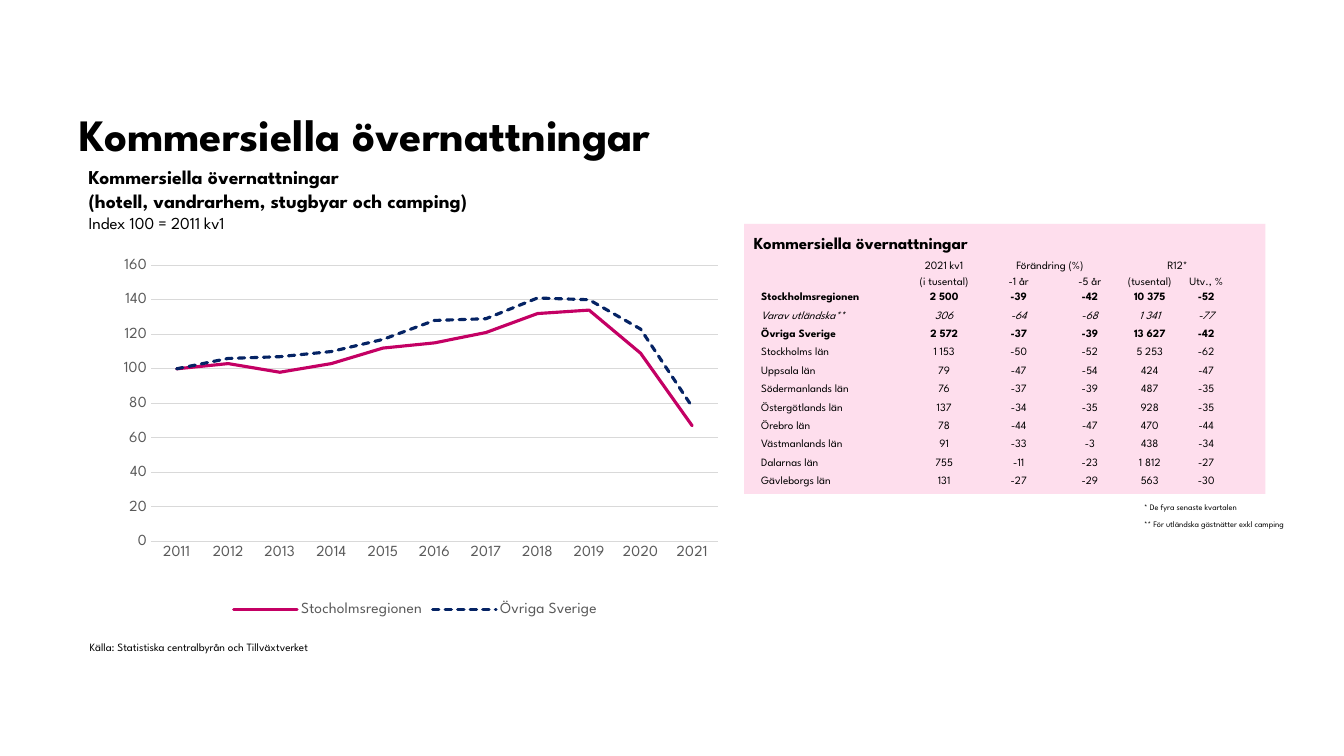
"""Build the slide on commercial overnight stays: index chart and regional table."""
from lxml import etree
from pptx import Presentation
from pptx.chart.data import CategoryChartData
from pptx.dml.color import RGBColor
from pptx.enum.chart import XL_CHART_TYPE, XL_LEGEND_POSITION, XL_TICK_MARK
from pptx.enum.dml import MSO_LINE
from pptx.enum.shapes import MSO_SHAPE
from pptx.enum.text import MSO_ANCHOR, MSO_AUTO_SIZE, PP_ALIGN
from pptx.oxml import parse_xml
from pptx.oxml.ns import nsdecls, qn
from pptx.util import Inches, Pt

FONT = "League Spartan"
BLACK = RGBColor(0x00, 0x00, 0x00)
GREY = RGBColor(0x59, 0x59, 0x59)
GRID = RGBColor(0xD9, 0xD9, 0xD9)
PINK = RGBColor(0xFE, 0xDE, 0xED)
MAGENTA = RGBColor(0xC4, 0x00, 0x64)
NAVY = RGBColor(0x05, 0x23, 0x64)
SOLID, DASHED = MSO_LINE.SOLID, MSO_LINE.SQUARE_DOT
NO_TICKS = XL_TICK_MARK.NONE
TOP, MIDDLE, BOTTOM = MSO_ANCHOR.TOP, MSO_ANCHOR.MIDDLE, MSO_ANCHOR.BOTTOM
PLAIN_TABLE = "{2D5ABB26-0587-4C30-8999-92F81FD0307C}"

TITLE = [("Kommersiella övernattningar", 32, True)]
CHART_HEADING = [
    ("Kommersiella övernattningar", 14, True),
    ("(hotell, vandrarhem, stugbyar och camping)", 14, True),
    ("Index 100 = 2011 kv1", 12, False),
]
TABLE_HEADING = [("Kommersiella övernattningar", 12, True)]
LABELS = [
    ((0.79, 6.3, 2.77, 0.24), "Källa: Statistiska centralbyrån och Tillväxtverket", 8),
    ((11.25, 4.93, 1.29, 0.2), "* De fyra senaste kvartalen", 6),
    ((11.25, 5.1, 1.72, 0.2), "** För utländska gästnätter exkl camping", 6),
]

YEARS = [str(year) for year in range(2011, 2022)]
INDEX_SERIES = [
    ("Stocholmsregionen", MAGENTA, SOLID,
     (100, 103, 98, 103, 112, 115, 121, 132, 134, 109, 67)),
    ("Övriga Sverige", NAVY, DASHED,
     (100, 106, 107, 110, 117, 128, 129, 141, 140, 123, 78)),
]
PLOT_SHARES = {"x": 0.085, "y": 0.069, "w": 0.89, "h": 0.723}

REGIONS = [
    ("", "2021 kv1", "Förändring (%)", "", "R12*", ""),
    ("", "(i tusental)", "-1 år", "-5 år", "(tusental)", "Utv., %"),
    ("Stockholmsregionen", "2 500", "-39", "-42", "10 375", "-52"),
    ("Varav utländska**", "306", "-64", "-68", "1 341", "-77"),
    ("Övriga Sverige", "2 572", "-37", "-39", "13 627", "-42"),
    ("Stockholms län", "1 153", "-50", "-52", "5 253", "-62"),
    ("Uppsala län", "79", "-47", "-54", "424", "-47"),
    ("Södermanlands län", "76", "-37", "-39", "487", "-35"),
    ("Östergötlands län", "137", "-34", "-35", "928", "-35"),
    ("Örebro län", "78", "-44", "-47", "470", "-44"),
    ("Västmanlands län", "91", "-33", "-3", "438", "-34"),
    ("Dalarnas län", "755", "-11", "-23", "1 812", "-27"),
    ("Gävleborgs län", "131", "-27", "-29", "563", "-30"),
]
HEADER_ROWS, BOLD_ROWS, ITALIC_ROW = 2, (2, 4), 3
SPANS = [(2, 3), (4, 5)]
COLUMN_WIDTHS = (1.56, 0.69, 0.79, 0.62, 0.57, 0.55)
HEADER_HEIGHTS = [0.21, 0.16]
TABLE_LEFT, TABLE_TOP, TABLE_HEIGHT = 7.46, 2.49, 2.38


def style(font, size, color=BLACK, bold=False, italic=False):
    font.name, font.size, font.bold, font.italic = FONT, Pt(size), bold, italic
    font.color.rgb = color


def add_text(slide, box, lines, wrap=False, anchor=TOP, inset=None):
    frame = slide.shapes.add_textbox(*map(Inches, box)).text_frame
    frame.word_wrap = wrap
    frame.vertical_anchor = anchor
    if inset is None:
        frame.auto_size = MSO_AUTO_SIZE.SHAPE_TO_FIT_TEXT
    else:
        frame.margin_left = frame.margin_right = Inches(inset)
        frame.margin_top = frame.margin_bottom = Inches(inset)
    for number, (line, size, bold) in enumerate(lines):
        paragraph = frame.add_paragraph() if number else frame.paragraphs[0]
        paragraph.text = line
        style(paragraph.font, size, bold=bold)


def add_region_table(slide):
    body_rows = len(REGIONS) - HEADER_ROWS
    body_height = (TABLE_HEIGHT - sum(HEADER_HEIGHTS)) / body_rows
    heights = HEADER_HEIGHTS + [body_height] * body_rows
    table = slide.shapes.add_table(
        len(REGIONS), len(COLUMN_WIDTHS), Inches(TABLE_LEFT), Inches(TABLE_TOP),
        Inches(sum(COLUMN_WIDTHS)), Inches(TABLE_HEIGHT)).table
    table.first_row = table.horz_banding = False
    table._tbl.tblPr.find(qn("a:tableStyleId")).text = PLAIN_TABLE
    for column, width in zip(table.columns, COLUMN_WIDTHS):
        column.width = Inches(width)
    for r, (region, height) in enumerate(zip(REGIONS, heights)):
        table.rows[r].height = Inches(height)
        for c, value in enumerate(region):
            cell = table.cell(r, c)
            cell.fill.background()
            cell.margin_left = Inches(0.01 if c else 0.09)
            cell.margin_right = cell.margin_top = Inches(0.01)
            cell.margin_bottom = 0
            cell.vertical_anchor = BOTTOM if r < HEADER_ROWS else MIDDLE
            paragraph = cell.text_frame.paragraphs[0]
            paragraph.alignment = PP_ALIGN.CENTER if c else PP_ALIGN.LEFT
            paragraph.text = value
            style(paragraph.font, 8, bold=r in BOLD_ROWS, italic=r == ITALIC_ROW)
            if not value:
                etree.SubElement(paragraph._p, qn("a:endParaRPr"), sz="800")
    for first, last in SPANS:
        table.cell(0, first).merge(table.cell(0, last))


def add_index_chart(slide):
    index_data = CategoryChartData()
    index_data.categories = YEARS
    for name, _, _, values in INDEX_SERIES:
        index_data.add_series(name, values)
    chart = slide.shapes.add_chart(
        XL_CHART_TYPE.LINE, Inches(0.96), Inches(2.37), Inches(6.32), Inches(3.79),
        index_data).chart
    style(chart.font, 11)
    chart.has_title = False
    chart.has_legend = True
    chart.legend.position = XL_LEGEND_POSITION.BOTTOM
    chart.legend.include_in_layout = False
    style(chart.legend.font, 11, GREY)

    years, index = chart.category_axis, chart.value_axis
    for axis in (years, index):
        axis.major_tick_mark = axis.minor_tick_mark = NO_TICKS
        style(axis.tick_labels.font, 11, GREY)
    index.minimum_scale, index.maximum_scale, index.major_unit = 0, 160, 20
    index.has_major_gridlines = True
    index.format.line.fill.background()
    for line in (years.format.line, index.major_gridlines.format.line):
        line.color.rgb = GRID
        line.width = Pt(0.75)

    plot = chart.plots[0]
    plot.vary_by_categories = False
    for series, (_, color, dash, _) in zip(plot.series, INDEX_SERIES):
        series.smooth = False
        line = series.format.line
        line.color.rgb = color
        line.width = Pt(2.25)
        line.dash_style = dash
        line._get_or_add_ln().set("cap", "rnd")

    modes = "".join(f'<c:{side}Mode val="edge"/>' for side in "xy")
    shares = "".join(f'<c:{k} val="{share}"/>' for k, share in PLOT_SHARES.items())
    plot_area = chart._chartSpace.chart.plotArea
    for layout in plot_area.findall(qn("c:layout")):
        plot_area.remove(layout)
    plot_area.insert(0, parse_xml(
        f'<c:layout {nsdecls("c")}><c:manualLayout><c:layoutTarget val="inner"/>'
        f'{modes}{shares}</c:manualLayout></c:layout>'))


def main():
    deck = Presentation()
    deck.slide_width, deck.slide_height = Inches(13.33), Inches(7.5)
    slide = deck.slides.add_slide(deck.slide_layouts[6])
    add_text(slide, (0.79, 0.37, 9.22, 1.22), TITLE, True, BOTTOM, 0)
    panel = slide.shapes.add_shape(
        MSO_SHAPE.RECTANGLE, Inches(7.38), Inches(2.22), Inches(5.17), Inches(2.68))
    panel.shadow.inherit = False
    panel.fill.solid()
    panel.fill.fore_color.rgb = PINK
    panel.line.fill.background()
    add_text(slide, (7.38, 2.26, 2.4, 0.3), TABLE_HEADING)
    add_text(slide, (0.78, 1.59, 4.79, 0.77), CHART_HEADING, True)
    for box, label, size in LABELS:
        add_text(slide, box, [(label, size, False)])
    add_region_table(slide)
    add_index_chart(slide)
    deck.save("out.pptx")


if __name__ == "__main__":
    main()
